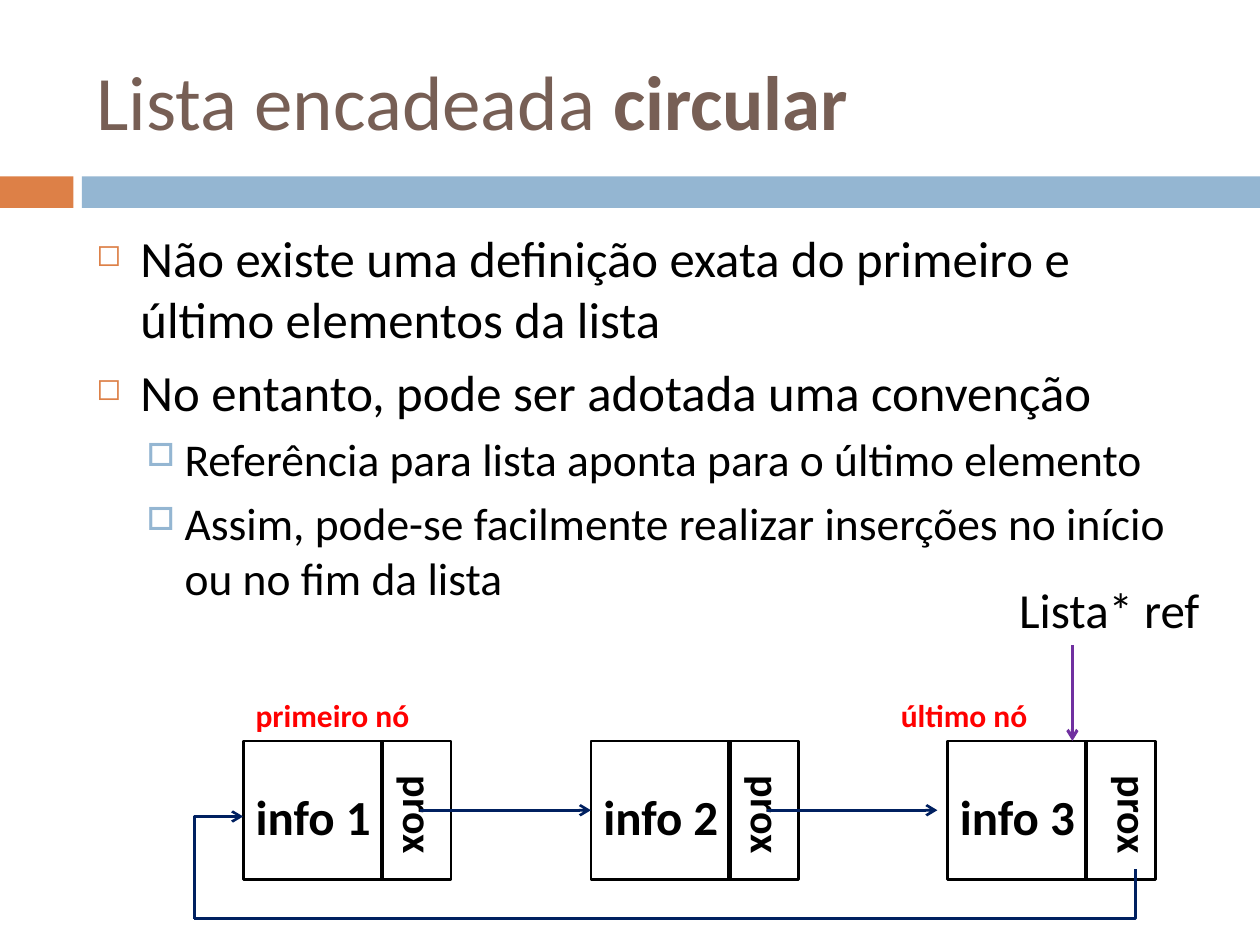
import pptx
import pptx.util
import pptx.dml.color
import pptx.enum.shapes
import pptx.enum.text
import pptx.oxml
import pptx.oxml.ns

Pt = pptx.util.Pt
RGB = pptx.dml.color.RGBColor
SHAPE = pptx.enum.shapes.MSO_SHAPE
LINK = pptx.enum.shapes.MSO_CONNECTOR
ANCHOR = pptx.enum.text.MSO_ANCHOR
FIT = pptx.enum.text.MSO_AUTO_SIZE

ORANGE = RGB(0xDD, 0x80, 0x47)
BLUE = RGB(0x94, 0xB6, 0xD2)
BROWN = RGB(0x77, 0x5F, 0x55)
BLACK = RGB(0, 0, 0)
NAVY = RGB(0, 0x20, 0x60)
PURPLE = RGB(0x70, 0x30, 0xA0)
RED = RGB(0xFF, 0, 0)

LEVELS = [
    dict(left=25.2, hang=25.2, gap=7, mark="◻", tint=ORANGE, scale=60, size=29),
    dict(left=50.4, hang=21.6, gap=5.5, mark="□", tint=BLUE, scale=70, size=26),
]
ITEMS = [
    (0, "Não existe uma definição exata do primeiro e último elementos da lista"),
    (0, "No entanto, pode ser adotada uma convenção"),
    (1, "Referência para lista aponta para o último elemento"),
    (1, "Assim, pode-se facilmente realizar inserções no início ou no fim da lista"),
]


def add_run(para, text, size=18, color=BLACK, bold=False):
    """Add a formatted run to a paragraph."""
    run = para.add_run()
    run.text = text
    font = run.font
    font.name, font.size, font.bold = "Calibri", Pt(size), bold
    font.color.rgb = color


def add_box(slide, x, y, w, h, wrap=True, turn=0):
    """Add an empty text box and return it."""
    box = slide.shapes.add_textbox(Pt(x), Pt(y), Pt(w), Pt(h))
    box.text_frame.word_wrap = wrap
    box.rotation = turn
    return box


def add_label(slide, text, x, y, w, h, wrap=True, turn=0, **style):
    """Add a text box that grows with its single line of text."""
    frame = add_box(slide, x, y, w, h, wrap, turn).text_frame
    frame.auto_size = FIT.SHAPE_TO_FIT_TEXT
    add_run(frame.paragraphs[0], text, **style)


def add_rect(slide, x, y, w, h, fill=None, line=None):
    """Add a rectangle with an optional fill and outline."""
    rect = slide.shapes.add_shape(SHAPE.RECTANGLE, Pt(x), Pt(y), Pt(w), Pt(h))
    rect.shadow.inherit = False
    if fill is None:
        rect.fill.background()
    else:
        rect.fill.solid()
        rect.fill.fore_color.rgb = fill
    if line is None:
        rect.line.fill.background()
    else:
        rect.line.color.rgb = line
        rect.line.width = Pt(1.5)
    return rect


def add_line(slide, x1, y1, x2, y2, color, width=1.5, head=False, bent=False):
    """Add a straight line, or an elbow that turns at its start."""
    kind = LINK.ELBOW if bent else LINK.STRAIGHT
    line = slide.shapes.add_connector(kind, Pt(x1), Pt(y1), Pt(x2), Pt(y2))
    line.line.color.rgb = color
    line.line.width = Pt(width)
    props = line._element.spPr
    qn, make = pptx.oxml.ns.qn, pptx.oxml.parse_xml
    space = pptx.oxml.ns.nsdecls("a")
    if head:
        props.find(qn("a:ln")).append(make(f'<a:tailEnd {space} type="arrow"/>'))
    if bent:
        guide = make(f'<a:gd {space} name="adj1" fmla="val 0"/>')
        props.find(qn("a:prstGeom")).find(qn("a:avLst")).append(guide)
    props.append(make(f"<a:effectLst {space}/>"))
    return line


def add_bullet(para, left, hang, mark, tint, scale):
    """Give a paragraph its indent and bullet."""
    props = para._p.get_or_add_pPr()
    props.set("marL", str(Pt(left)))
    props.set("indent", str(-Pt(hang)))
    space = pptx.oxml.ns.nsdecls("a")
    for part in (
        f'<a:buClr {space}><a:srgbClr val="{tint}"/></a:buClr>',
        f'<a:buSzPct {space} val="{scale * 1000}"/>',
        f'<a:buChar {space} char="{mark}"/>',
    ):
        props.append(pptx.oxml.parse_xml(part))


def draw_head(slide, x, y, w, h):
    """Draw the title and the two-colour band below it."""
    frame = add_box(slide, x + 48, y + 18, w - 78, 78).text_frame
    frame.vertical_anchor = ANCHOR.MIDDLE
    para = frame.paragraphs[0]
    add_run(para, "Lista encadeada ", size=44, color=BROWN)
    add_run(para, "circular", size=44, color=BROWN, bold=True)
    band = y + h - 18
    add_rect(slide, x, band, 42, 18, fill=ORANGE)
    add_rect(slide, x + 46.8, band, w - 46.8, 18, fill=BLUE)


def draw_body(slide, x, y, w, h):
    """Draw the bulleted text."""
    frame = add_box(slide, x, y, w, h).text_frame
    for i, (level, text) in enumerate(ITEMS):
        para = frame.add_paragraph() if i else frame.paragraphs[0]
        look = dict(LEVELS[level])
        gap, size = look.pop("gap"), look.pop("size")
        para.level = level
        if i:
            para.space_before = Pt(gap)
        add_bullet(para, **look)
        add_run(para, text, size=size)


def draw_node(slide, x, y, w, h, text, shift=0):
    """Draw a list node with its info and prox cells."""
    rect = add_rect(slide, x, y, w, h, line=BLACK)
    split = x + w * 2 / 3
    add_line(slide, split, y, split, y + h, BLACK, 2.5)
    add_label(slide, text, x, y + 22.4, 100.8, 41.2, size=28, bold=True)
    add_label(slide, "prox", x + 70.6 + shift, y + 25.2, 60.5, 36,
              turn=90, size=24, bold=True)
    return rect


def draw_list(slide, x, y, w, h):
    """Draw the circular list with its links and labels."""
    top, wide, tall = y + 96, 118.8, 79.2
    mid, base = top + tall / 2, y + h
    first, second, third = x + 28, x + 226.7, x + 430.5
    draw_node(slide, first, top, wide, tall, "info 1")
    node = draw_node(slide, second, top, wide, tall, "info 2")
    draw_node(slide, third, top, wide, tall, "info 3", shift=5.8)
    link = add_line(slide, first + 100.8, mid, second, mid, NAVY, head=True)
    link.end_connect(node, 1)
    add_line(slide, second + 100.8, mid, third - 5.8, mid, NAVY, head=True)
    add_line(slide, x + w, base - 28.4, x, base, NAVY, bent=True)
    add_line(slide, x, base, first, mid + 3.6, NAVY, head=True, bent=True)
    add_label(slide, "Lista* ref", third + 33.8, y, 117.4, 41.2,
              wrap=False, size=28)
    ref = third + 71.3
    add_line(slide, ref, y + 41.2, ref, top, PURPLE, 1.75, head=True)
    for text, left in (("primeiro nó", first), ("último nó", third - 33.8)):
        add_label(slide, text, left, top - 29.1, 120.2, 29.1,
                  size=18, color=RED, bold=True)


def main():
    """Build the slide and save it."""
    deck = pptx.Presentation()
    deck.slide_width, deck.slide_height = Pt(720), Pt(540)
    slide = deck.slides.add_slide(deck.slide_layouts[6])
    draw_head(slide, 0, 0, 720, 118.8)
    draw_body(slide, 48, 126, 642, 354)
    draw_list(slide, 111, 327.4, 538, 197.6)
    deck.save("out.pptx")


if __name__ == "__main__":
    main()
